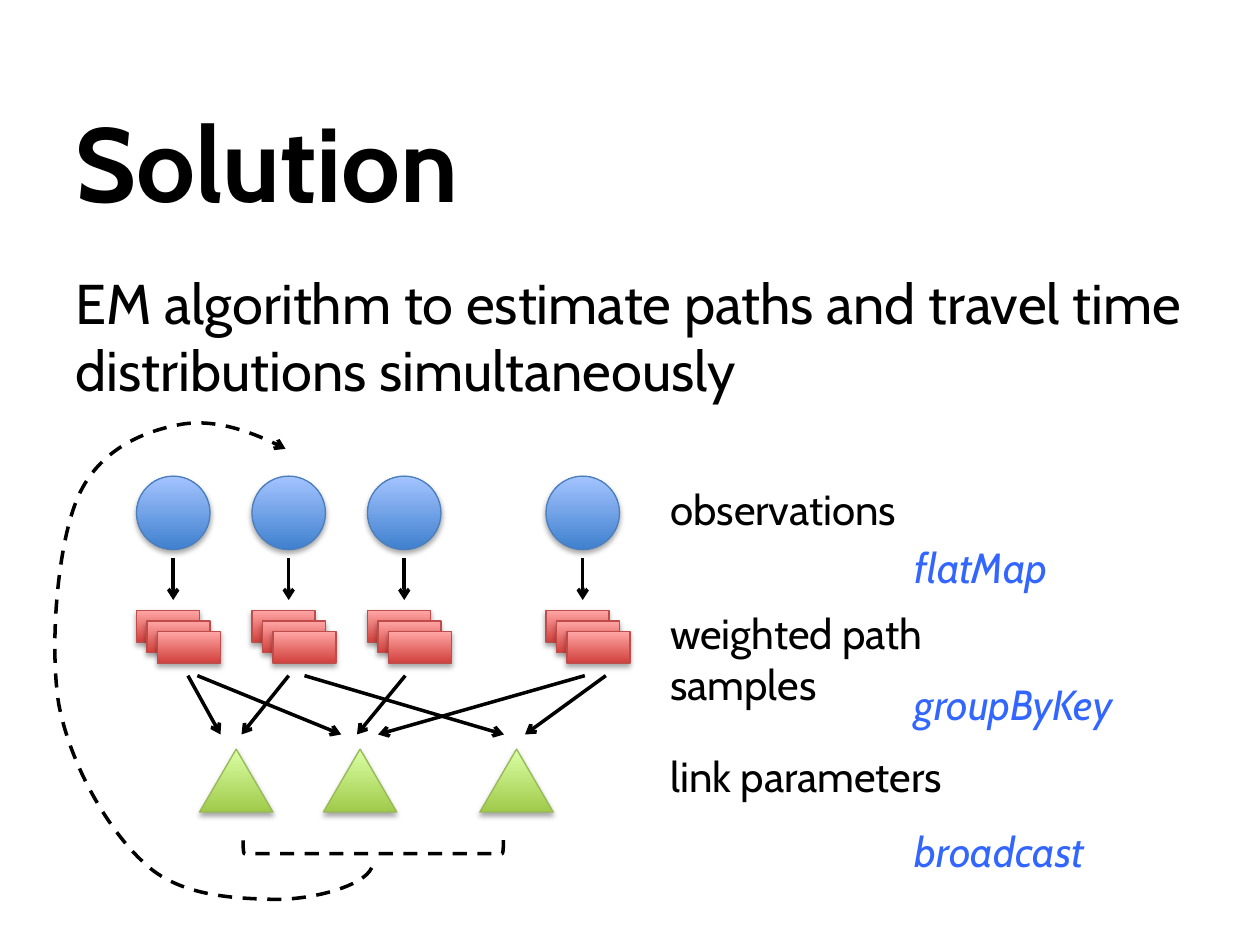
from dataclasses import dataclass

from lxml import etree
from pptx import Presentation
from pptx import util as u
from pptx.dml.color import RGBColor
from pptx.enum import dml, shapes, text
from pptx.oxml.ns import qn


@dataclass(frozen=True)
class Theme:
    font: str = "Cabin"
    ink: str = "000000"
    op: str = "3366FF"
    # Each look: bottom colour, top colour, outline
    blue: tuple = ("3F80CE", "A4C4FF", "4B7EBC")
    red: tuple = ("D1403C", "FFA6A5", "BF4C48")
    green: tuple = ("A0CA4A", "DAFFA5", "98B955")
    title: int = 60
    body: int = 32
    label: int = 24
    edge: float = 0.75
    stroke: float = 2


T = Theme()
KIND = shapes.MSO_SHAPE


@dataclass(frozen=True)
class Box:
    """A region measured in grid cells of a twelfth of an inch."""
    x: float
    y: float
    w: float
    h: float

    def sub(self, x, y, w, h):
        return Box(self.x + x, self.y + y, w, h)

    def at(self, x, y):
        return cell(self.x + x), cell(self.y + y)

    def emu(self):
        return [cell(n) for n in (self.x, self.y, self.w, self.h)]


def cell(n):
    return u.Inches(n / 12)


def rgb(code):
    return RGBColor.from_string(code)


def add(node, tag, **attrs):
    return etree.SubElement(node, qn(tag), {k: str(v) for k, v in attrs.items()})


def write(slide, box, words, size, color=T.ink, bold=False, slant=False,
          anchor=text.MSO_ANCHOR.TOP):
    frame = slide.shapes.add_textbox(*box.emu()).text_frame
    frame.word_wrap = True
    frame.vertical_anchor = anchor
    run = frame.paragraphs[0].add_run()
    run.text = words
    font = run.font
    font.name, font.size, font.color.rgb = T.font, u.Pt(size), rgb(color)
    font.bold, font.italic = bold, slant


def solid(slide, kind, box, look):
    """A shape with an upward gradient and a soft shadow below."""
    shape = slide.shapes.add_shape(kind, *box.emu())
    shape.fill.gradient()
    shape.fill.gradient_angle = 90
    for stop, code in zip(shape.fill.gradient_stops, look):
        stop.color.rgb = rgb(code)
    shape.line.color.rgb = rgb(look[2])
    shape.line.width = u.Pt(T.edge)
    shape.shadow.inherit = False
    glow = shape._element.spPr.find(qn("a:effectLst"))
    drop = add(glow, "a:outerShdw", blurRad=u.Pt(3.1), dist=u.Pt(1.8),
               dir=5400000, rotWithShape=0)
    add(add(drop, "a:srgbClr", val="000000"), "a:alpha", val=35000)


def ink(shape, dash=False, arrow=False):
    line = shape.line
    line.color.rgb, line.width = rgb(T.ink), u.Pt(T.stroke)
    if dash:
        line.dash_style = dml.MSO_LINE.DASH
    props = shape._element.spPr
    if arrow:
        add(props.find(qn("a:ln")), "a:tailEnd", type="arrow")
    if props.find(qn("a:effectLst")) is None:
        add(props, "a:effectLst")


def link(slide, box, x1, y1, x2, y2):
    line = slide.shapes.add_connector(
        shapes.MSO_CONNECTOR.STRAIGHT, *box.at(x1, y1), *box.at(x2, y2))
    ink(line, arrow=True)


def curve(slide, box, knots):
    """A Bezier line: a start point, then three points for each segment."""
    pts = [box.at(*k) for k in knots]
    pen = slide.shapes.build_freeform(*pts[0])
    pen.add_line_segments(pts[1:], close=False)
    shape = pen.convert_to_shape()
    steps = shape._element.xpath(".//a:lnTo")
    for i in range(0, len(steps), 3):
        bend = etree.Element(qn("a:cubicBezTo"))
        steps[i].addprevious(bend)
        for step in steps[i:i + 3]:
            bend.append(step[0])
            step.getparent().remove(step)
    shape.fill.background()
    shape.shadow.inherit = False
    ink(shape, dash=True, arrow=True)


def heading(slide, box):
    write(slide, box.sub(0, 0, 108, 15), "Solution", T.title, bold=True,
          anchor=text.MSO_ANCHOR.MIDDLE)
    write(slide, box.sub(0, 17.2, box.w, box.h - 17.2),
          "EM algorithm to estimate paths and travel time "
          "distributions simultaneously", T.body)


def diagram(slide, box):
    # Observations, each feeding a stack of samples
    for col in (0, 11, 22, 39):
        solid(slide, KIND.OVAL, box.sub(col, 0, 7, 7), T.blue)
        for i in range(3):
            solid(slide, KIND.RECTANGLE,
                  box.sub(col + i, 12.8 + i, 6, 3), T.red)
        link(slide, box, col + 3.5, 7.8, col + 3.5, 11.8)

    # Link parameters
    for col in (6, 17.8, 32.7):
        solid(slide, KIND.ISOSCELES_TRIANGLE, box.sub(col, 26, 7, 6), T.green)

    # Samples grouped by link
    for start, end in ((4.9, 8), (5.8, 19.5), (14.5, 10), (16, 35),
                       (25.6, 21), (44.7, 37), (42.7, 23)):
        link(slide, box, start, 19, end, 24.6)

    # Bracket under the parameters
    brace = slide.shapes.add_shape(
        KIND.LEFT_BRACKET, *box.sub(21.9, 22.9, 1.3, 24.8).emu())
    brace.rotation = 270
    brace.fill.background()
    brace.shadow.inherit = False
    ink(brace, dash=True)

    # Loop back to the observations
    curve(slide, box, (
        (22.4, 37.3),
        (21.6, 39.1), (16.5, 40.4), (12.9, 40.3),
        (9.2, 40.2), (4, 40), (0.7, 36.8),
        (-2.7, 33.7), (-6.3, 27.5), (-7.4, 21.7),
        (-8.3, 16), (-7.5, 6.7), (-5.7, 2.3),
        (-3.9, -2.2), (0.2, -4.1), (3.6, -4.8),
        (6.8, -5.6), (11, -4.3), (14.2, -2.6)))


def legend(slide, box):
    # Stage names
    for row, wide, words in ((0, 24.6, "observations"),
                             (11.8, 40.8, "weighted path samples"),
                             (25.4, 28.4, "link parameters")):
        write(slide, box.sub(0, row, wide, 6), words, T.label)
    # Operations between the stages
    for row, words in ((5.5, "flatMap"), (18.5, "groupByKey"),
                       (32.5, "broadcast")):
        write(slide, box.sub(23.3, row, 23, 6), words, T.label, T.op,
              slant=True)


def main():
    deck = Presentation()
    deck.slide_width, deck.slide_height = cell(120), cell(90)
    slide = deck.slides.add_slide(deck.slide_layouts[6])
    heading(slide, Box(6, 7.8, 109, 72.6))
    diagram(slide, Box(13, 45.35, 46, 41))
    legend(slide, Box(62.65, 45.5, 47, 39))
    deck.save("out.pptx")


if __name__ == "__main__":
    main()
